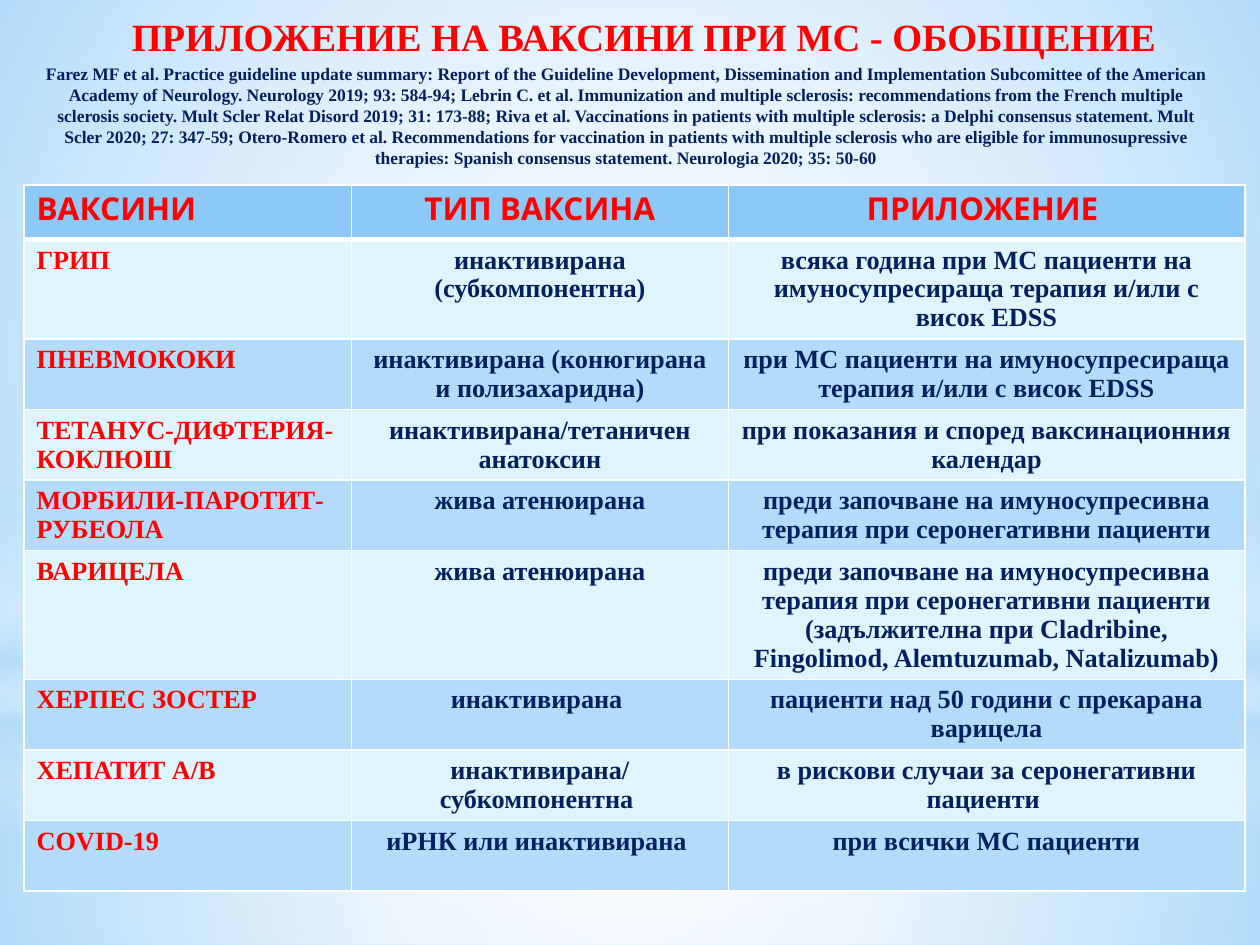
from dataclasses import dataclass
from typing import Optional

from pptx import Presentation
from pptx.dml.color import RGBColor
from pptx.enum import shapes, text
from pptx.oxml import parse_xml
from pptx.oxml import ns
from pptx.util import Inches, Pt


@dataclass(frozen=True)
class Theme:
    red: str = "FF0000"
    navy: str = "002060"
    white: str = "FFFFFF"
    sky: str = "B4DCFA"
    header: str = "8CC9F7"
    pale: str = "DFF5FD"
    serif: str = "Times New Roman"
    sans: str = "Karla"
    title_size: float = 22
    source_size: float = 10
    header_size: float = 18
    body_size: float = 15


@dataclass(frozen=True)
class Stop:
    position: int
    color: str
    opacity: int = 100


@dataclass(frozen=True)
class Backdrop:
    preset: shapes.MSO_SHAPE
    top: float
    height: float
    stops: tuple[Stop, ...]
    angle: Optional[int] = None


@dataclass(frozen=True)
class Vaccine:
    name: str
    kind: str
    use: str
    height: float = 0.56


THEME = Theme()
WIDTH, HEIGHT = 10, 7.5
COLUMN_WIDTHS = (2.6, 2.99, 4.1)
HEADER_HEIGHT = 0.43
THIN, THICK = 1, 3

RECTANGLE, OVAL = shapes.MSO_SHAPE.RECTANGLE, shapes.MSO_SHAPE.OVAL
BACKDROPS = (
    Backdrop(RECTANGLE, 5.58, 1.92, (
        Stop(0, THEME.white, 91), Stop(37, THEME.white, 76), Stop(100, THEME.sky, 79))),
    Backdrop(RECTANGLE, 0, 5.58, (
        Stop(0, THEME.white, 89), Stop(48, THEME.white, 62), Stop(100, THEME.sky, 79))),
    Backdrop(RECTANGLE, 4.12, 2.5, (
        Stop(0, THEME.white, 0), Stop(29, THEME.white, 30), Stop(45, THEME.sky, 40),
        Stop(55, THEME.white, 26), Stop(65, THEME.sky, 60), Stop(100, THEME.white, 0)), 90),
    Backdrop(OVAL, 1.75, 5.58, (Stop(0, THEME.white), Stop(56, THEME.white, 0))),
)

TITLE = "ПРИЛОЖЕНИЕ НА ВАКСИНИ ПРИ МС - ОБОБЩЕНИЕ"
SOURCES = (
    "Farez MF et al. Practice guideline update summary: Report of the Guideline Development, "
    "Dissemination and Implementation Subcomittee of the American Academy of Neurology. "
    "Neurology 2019; 93: 584-94; Lebrin C. et al. Immunization and multiple sclerosis: "
    "recommendations from the French multiple sclerosis society. Mult Scler Relat Disord 2019; "
    "31: 173-88; Riva et al. Vaccinations in patients with multiple sclerosis: a Delphi consensus "
    "statement. Mult Scler 2020; 27: 347-59; Otero-Romero et al. Recommendations for vaccination "
    "in patients with multiple sclerosis who are eligible for immunosupressive therapies: "
    "Spanish consensus statement. Neurologia 2020; 35: 50-60"
)
HEADINGS = ("ВАКСИНИ", "ТИП ВАКСИНА", "ПРИЛОЖЕНИЕ ")
SERONEGATIVE = "преди започване на имуносупресивна терапия при серонегативни пациенти"
VACCINES = (
    Vaccine("ГРИП", "инактивирана (субкомпонентна)",
            "всяка година при МС пациенти на имуносупресираща терапия и/или с висок EDSS", 0.78),
    Vaccine("ПНЕВМОКОКИ", "инактивирана (конюгирана и полизахаридна)",
            "при МС пациенти на имуносупресираща терапия и/или с висок EDSS"),
    Vaccine("ТЕТАНУС-ДИФТЕРИЯ-КОКЛЮШ", "инактивирана/тетаничен анатоксин",
            "при показания и според ваксинационния календар"),
    Vaccine("МОРБИЛИ-ПАРОТИТ-РУБЕОЛА", "жива атенюирана", SERONEGATIVE),
    Vaccine("ВАРИЦЕЛА", "жива атенюирана", SERONEGATIVE
            + "\n(задължителна при Cladribine, Fingolimod, Alemtuzumab, Natalizumab)", 1.02),
    Vaccine("ХЕРПЕС ЗОСТЕР", "инактивирана ", "пациенти над 50 години с прекарана варицела"),
    Vaccine("ХЕПАТИТ А/В", "инактивирана/субкомпонентна ",
            "в рискови случаи за серонегативни пациенти "),
    Vaccine("COVID-19", "иРНК или инактивирана ", "при всички МС пациенти"),
)


def style(paragraph, size: float, color: str, name: str = THEME.serif,
          centered: bool = True) -> None:
    paragraph.alignment = text.PP_ALIGN.CENTER if centered else text.PP_ALIGN.LEFT
    font = paragraph.font
    font.name, font.size, font.bold = name, Pt(size), True
    font.color.rgb = RGBColor.from_string(color)


def indent(paragraph, left: float) -> None:
    properties = paragraph._p.get_or_add_pPr()
    properties.set("marL", str(Inches(left)))
    properties.set("indent", "0")


def draw_backdrop(slide, backdrop: Backdrop) -> None:
    shape = slide.shapes.add_shape(backdrop.preset, 0, Inches(backdrop.top),
                                   Inches(WIDTH), Inches(backdrop.height))
    shape.shadow.inherit = False
    shape.line.fill.background()
    shape.fill.background()
    stops = "".join(
        f'<a:gs pos="{stop.position * 1000}"><a:srgbClr val="{stop.color}">'
        f'<a:alpha val="{stop.opacity * 1000}"/></a:srgbClr></a:gs>'
        for stop in backdrop.stops)
    direction = (
        '<a:path path="circle"><a:fillToRect l="50000" t="50000" r="50000" b="50000"/></a:path>'
        if backdrop.angle is None else f'<a:lin ang="{backdrop.angle * 60000}" scaled="0"/>')
    gradient = parse_xml(f'<a:gradFill {ns.nsdecls("a")} rotWithShape="1">'
                         f'<a:gsLst>{stops}</a:gsLst>{direction}</a:gradFill>')
    properties = shape.element.spPr
    properties.replace(properties.find(ns.qn("a:noFill")), gradient)


def draw_title(slide) -> None:
    title = slide.shapes.title
    slide.shapes.element.append(title.element)
    title.left, title.top, title.width, title.height = map(Inches, (0.2, 0.05, 9.53, 1.1))
    frame = title.text_frame
    frame.word_wrap = True
    frame.auto_size = text.MSO_AUTO_SIZE.NONE
    frame.vertical_anchor = text.MSO_ANCHOR.TOP
    frame.margin_top, frame.margin_bottom = Inches(0.05), 0
    frame.text = f"{TITLE}\n{SOURCES}"
    heading, sources = frame.paragraphs
    style(heading, THEME.title_size, THEME.red)
    heading.space_before = Pt(0)
    indent(heading, 0.29)
    style(sources, THEME.source_size, THEME.navy)
    sources.line_spacing = Pt(12)
    sources.space_before = Pt(2.5)
    indent(sources, 0)


def draw_borders(cell, top: float, bottom: float) -> None:
    properties = cell._tc.get_or_add_tcPr()
    widths = {"L": THIN, "R": THIN, "T": top, "B": bottom}
    for index, (side, width) in enumerate(widths.items()):
        properties.insert(index, parse_xml(
            f'<a:ln{side} {ns.nsdecls("a")} w="{Pt(width)}"><a:solidFill>'
            f'<a:srgbClr val="{THEME.white}"/></a:solidFill></a:ln{side}>'))


def draw_table(slide) -> None:
    rows = [HEADINGS] + [(vaccine.name, vaccine.kind, vaccine.use) for vaccine in VACCINES]
    heights = [HEADER_HEIGHT] + [vaccine.height for vaccine in VACCINES]
    table = slide.shapes.add_table(
        len(rows), len(HEADINGS), Inches(0.19), Inches(1.47),
        Inches(sum(COLUMN_WIDTHS)), Inches(sum(heights))).table
    for column, width in zip(table.columns, COLUMN_WIDTHS):
        column.width = Inches(width)
    for row_index, (values, height) in enumerate(zip(rows, heights)):
        table.rows[row_index].height = Inches(height)
        is_header = row_index == 0
        band = THEME.pale if row_index % 2 else THEME.sky
        for column_index, value in enumerate(values):
            cell = table.cell(row_index, column_index)
            cell.text = value
            cell.fill.solid()
            cell.fill.fore_color.rgb = RGBColor.from_string(THEME.header if is_header else band)
            draw_borders(cell, THICK if row_index == 1 else THIN, THICK if is_header else THIN)
            is_name = column_index == 0
            for paragraph in cell.text_frame.paragraphs:
                style(paragraph,
                      THEME.header_size if is_header else THEME.body_size,
                      THEME.red if is_header or is_name else THEME.navy,
                      THEME.sans if is_header else THEME.serif,
                      centered=not is_name)


def main() -> None:
    presentation = Presentation()
    presentation.slide_width, presentation.slide_height = Inches(WIDTH), Inches(HEIGHT)
    slide = presentation.slides.add_slide(presentation.slide_layouts[5])
    slide.background.fill.solid()
    slide.background.fill.fore_color.rgb = RGBColor.from_string(THEME.sky)
    for backdrop in BACKDROPS:
        draw_backdrop(slide, backdrop)
    draw_title(slide)
    draw_table(slide)
    presentation.save("out.pptx")


if __name__ == "__main__":
    main()
